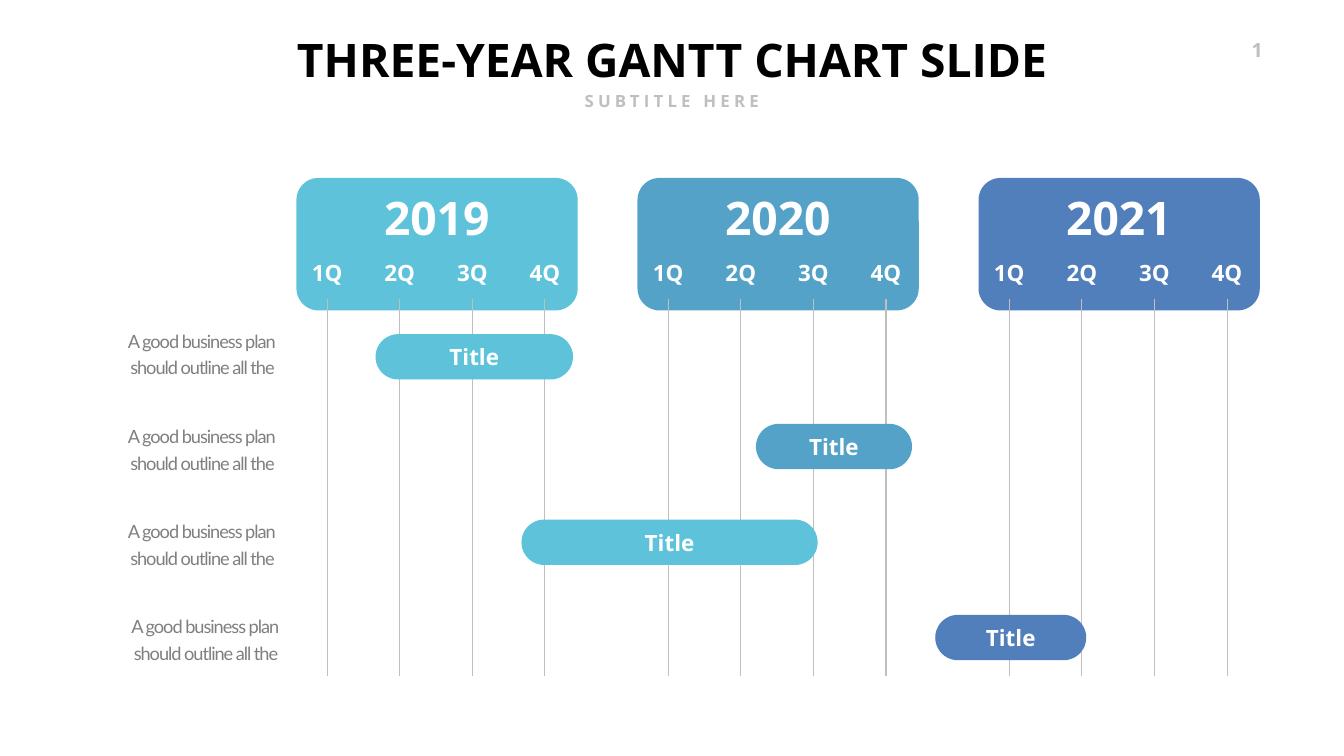
from collections import namedtuple

from pptx import Presentation
from pptx import util as u
from pptx.dml.color import RGBColor
from pptx.enum import shapes, text
from pptx.oxml.ns import qn
from lxml import etree

Box = namedtuple("Box", "left top width height")
Bar = namedtuple("Bar", "row start length drop color")

# Colours
WHITE = RGBColor(0xFF, 0xFF, 0xFF)
BLACK = RGBColor(0x00, 0x00, 0x00)
SILVER = RGBColor(0xBF, 0xBF, 0xBF)
GRAY = RGBColor(0x7F, 0x7F, 0x7F)
AQUA = RGBColor(0x5D, 0xC2, 0xDA)
SKY = RGBColor(0x54, 0xA2, 0xC8)
BLUE = RGBColor(0x50, 0x7F, 0xBB)

# Grid, in inches
SLIDE_W, SLIDE_H = 26.66, 15
QUARTER = 1.44
YEAR_PITCH = 6.765
ROW = 1.89
BAR_H = 0.9

HEADER = Box(5.5, 0.58, 15.67, 1.68)
PAGE_NUMBER = Box(24.28, 0.7, 0.87, 0.57)
TIMELINE = Box(5.88, 3.53, 5.58 + 2 * YEAR_PITCH, 9.88)
LABELS = Box(1.44, 6.34, 4.28, 4 * ROW)

YEARS = [("2019", AQUA), ("2020", SKY), ("2021", BLUE)]
TASK = "A good business plan should outline all the"
LABEL_SHIFTS = [0, 0, 0, 0.07]
# start and length in quarters, drop in inches below the top of the row
BARS = [
    Bar(0, 1.09, 2.72, 0.29, AQUA),
    Bar(1, 6.33, 2.15, 0.18, SKY),
    Bar(3, 8.8, 2.08, 0.19, BLUE),
    Bar(2, 3.1, 4.08, 0.19, AQUA),
]


def inches(box):
    return [u.Inches(length) for length in box]


def write(frame, words, size, color, align=text.PP_ALIGN.CENTER,
          name="Open Sans", bold=True, spacing=0):
    paragraph = frame.paragraphs[0]
    paragraph.text = words
    paragraph.alignment = align
    font = paragraph.font
    font.name, font.size, font.bold = name, u.Pt(size), bold
    font.color.rgb = color
    if spacing:
        font._rPr.set("spc", str(int(spacing * 100)))
    return paragraph


def add_text(slide, box, words, size, color, wrap=False,
             anchor=text.MSO_ANCHOR.TOP, **style):
    frame = slide.shapes.add_textbox(*inches(box)).text_frame
    frame.word_wrap = wrap
    frame.auto_size = text.MSO_AUTO_SIZE.SHAPE_TO_FIT_TEXT
    frame.vertical_anchor = anchor
    return frame, write(frame, words, size, color, **style)


def add_rounded(slide, box, color):
    rounded = slide.shapes.add_shape(
        shapes.MSO_SHAPE.ROUNDED_RECTANGLE, *inches(box))
    rounded.shadow.inherit = False
    rounded.fill.solid()
    rounded.fill.fore_color.rgb = color
    rounded.line.fill.background()
    return rounded


def add_gridline(slide, x, top, bottom):
    gridline = slide.shapes.add_connector(
        shapes.MSO_CONNECTOR.STRAIGHT,
        *inches((x, top, x, bottom)))
    gridline.line.color.rgb = SILVER
    gridline.line.width = u.Pt(1.5)
    etree.SubElement(gridline._element.spPr, qn("a:effectLst"))


def add_header(slide, box):
    add_text(slide, box._replace(height=1.21),
             "THREE-YEAR GANTT CHART SLIDE", 66, BLACK)
    subtitle = Box(box.left + 5.89, box.top + 1.18, 3.87, 0.5)
    add_text(slide, subtitle, "SUBTITLE HERE", 24, SILVER, spacing=6)


def add_year(slide, box, year, color):
    # Card with the year, then its quarters and their gridlines
    add_rounded(slide, box._replace(height=2.63), color)
    add_text(slide, Box(box.left + 1.63, box.top + 0.18, 2.31, 1.21),
             year, 66, WHITE)
    for quarter in range(4):
        x = box.left + 0.61 + quarter * QUARTER
        add_text(slide, Box(x - 0.41, box.top + 1.56, 0.82, 0.64),
                 f"{quarter + 1}Q", 32, WHITE,
                 anchor=text.MSO_ANCHOR.BOTTOM)
        add_gridline(slide, x, box.top + 2.4, box.top + box.height)


def add_labels(slide, box):
    for row, shift in enumerate(LABEL_SHIFTS):
        cell = Box(box.left + shift, box.top + row * ROW, box.width, 1.28)
        frame, paragraph = add_text(
            slide, cell, TASK, 26, GRAY, wrap=True,
            anchor=text.MSO_ANCHOR.MIDDLE, align=text.PP_ALIGN.RIGHT,
            name="Lato", bold=False, spacing=-1.5)
        paragraph.line_spacing = u.Pt(38)
        frame.margin_left = frame.margin_right = u.Inches(0.27)
        frame.margin_top = frame.margin_bottom = u.Inches(0.13)


def add_bars(slide, box):
    for bar in BARS:
        pill = add_rounded(slide, Box(
            box.left + bar.start * QUARTER,
            box.top + bar.row * ROW + bar.drop,
            bar.length * QUARTER, BAR_H), bar.color)
        pill.adjustments[0] = 0.5
        pill.text_frame.vertical_anchor = text.MSO_ANCHOR.MIDDLE
        write(pill.text_frame, "Title", 32, WHITE)


def main():
    deck = Presentation()
    deck.slide_width, deck.slide_height = u.Inches(SLIDE_W), u.Inches(SLIDE_H)
    slide = deck.slides.add_slide(deck.slide_layouts[6])

    add_text(slide, PAGE_NUMBER, "1", 28, SILVER,
             align=text.PP_ALIGN.RIGHT, spacing=3)
    add_header(slide, HEADER)
    for index, (year, color) in enumerate(YEARS):
        add_year(slide, Box(TIMELINE.left + index * YEAR_PITCH, TIMELINE.top,
                            5.58, TIMELINE.height), year, color)
    add_labels(slide, LABELS)
    add_bars(slide, Box(TIMELINE.left, LABELS.top,
                        TIMELINE.width, LABELS.height))
    deck.save("out.pptx")


if __name__ == "__main__":
    main()
